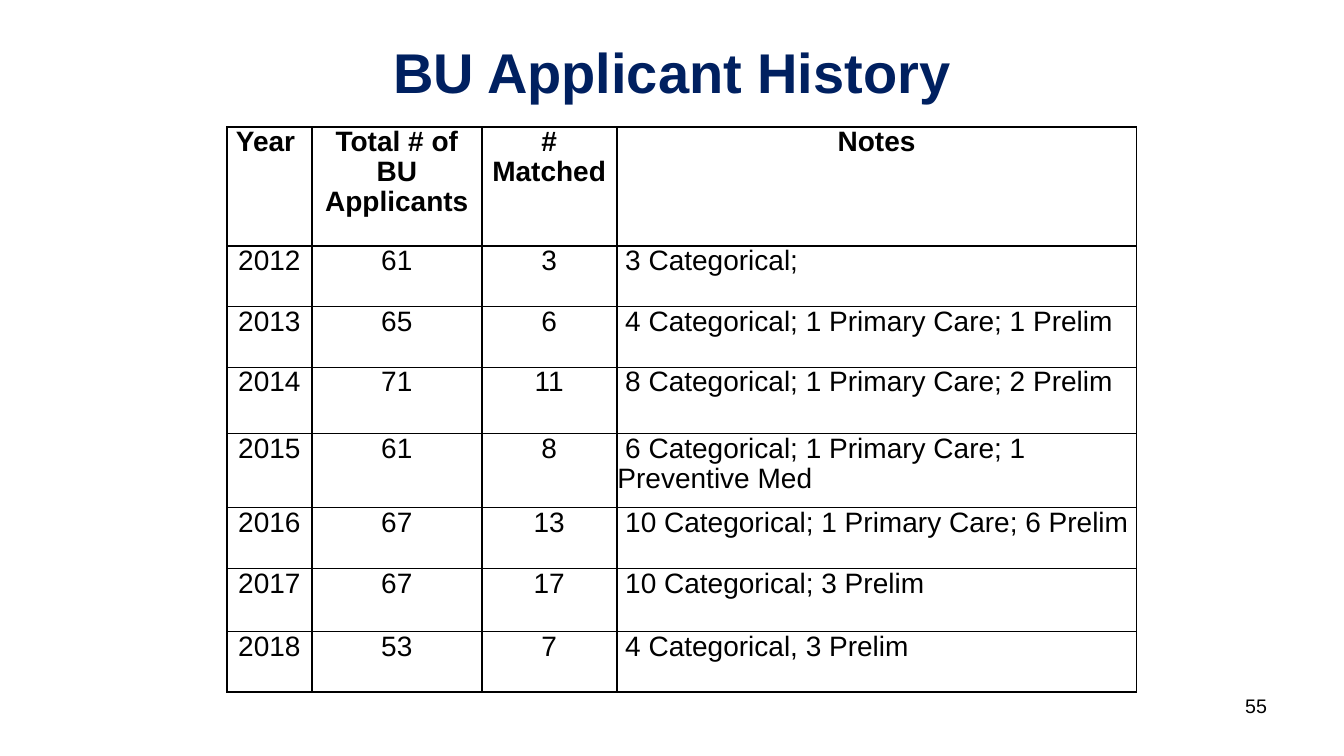
from dataclasses import dataclass

from lxml import etree
from pptx import Presentation
from pptx.dml.color import RGBColor
from pptx.enum.text import MSO_ANCHOR, PP_ALIGN
from pptx.oxml.ns import qn
from pptx.util import Cm, Pt

LEFT, CENTER, RIGHT = PP_ALIGN.LEFT, PP_ALIGN.CENTER, PP_ALIGN.RIGHT
MIDDLE = MSO_ANCHOR.MIDDLE
TITLE_ONLY = 5


@dataclass(frozen=True)
class Theme:
    font: str = "Arial"
    navy: str = "002060"
    black: str = "000000"
    title_size: int = 40
    table_size: int = 20
    number_size: int = 14
    thick: float = 1.5
    thin: float = 0.5
    line_spacing: float = 0.96


THEME = Theme()

COLUMN_WIDTHS = (2.14, 4.28, 3.4, 13.1)
ROW_HEIGHTS = (3, 1.52, 1.53, 1.67, 1.87, 1.53, 1.59, 1.53)
APPLICANT_HISTORY = (
    ("Year ", "Total # of BU Applicants", "# Matched", "Notes"),
    ("2012", "61", "3", " 3 Categorical;"),
    ("2013", "65", "6", " 4 Categorical; 1 Primary Care; 1 Prelim"),
    ("2014", "71", "11", " 8 Categorical; 1 Primary Care; 2 Prelim"),
    ("2015", "61", "8", " 6 Categorical; 1 Primary Care; 1 Preventive Med"),
    ("2016", "67", "13", " 10 Categorical; 1 Primary Care; 6 Prelim"),
    ("2017", "67", "17", " 10 Categorical; 3 Prelim"),
    ("2018", "53", "7", " 4 Categorical, 3 Prelim"),
)


def place(shape, box):
    shape.left, shape.top, shape.width, shape.height = (Cm(length) for length in box)


def write(frame, text, size, color, align, bold=False):
    frame.text = text
    para = frame.paragraphs[0]
    para.alignment = align
    font = para.runs[0].font
    font.name, font.size, font.bold = THEME.font, Pt(size), bold
    font.color.rgb = RGBColor.from_string(color)
    return para


def set_borders(cell, top, bottom):
    properties = cell._tc.get_or_add_tcPr()
    sides = (("L", THEME.thick), ("R", THEME.thick), ("T", top), ("B", bottom))
    for position, (side, width) in enumerate(sides):
        line = etree.Element(qn(f"a:ln{side}"), w=str(Pt(width)))
        fill = etree.SubElement(line, qn("a:solidFill"))
        etree.SubElement(fill, qn("a:srgbClr"), val=THEME.black)
        properties.insert(position, line)


def add_title(page, box):
    title = page.shapes.title
    place(title, box)
    frame = title.text_frame
    frame.vertical_anchor = MIDDLE
    write(frame, "BU Applicant History", THEME.title_size, THEME.navy, CENTER, True)


def fill_cell(cell, text, align, header):
    cell.margin_left = cell.margin_right = cell.margin_top = Cm(0.02)
    cell.margin_bottom = Cm(0)
    cell.fill.background()
    para = write(cell.text_frame, text, THEME.table_size, THEME.black, align, header)
    para.line_spacing = THEME.line_spacing


def add_history_table(page, box):
    rows, columns = len(ROW_HEIGHTS), len(COLUMN_WIDTHS)
    lengths = (Cm(length) for length in box)
    table = page.shapes.add_table(rows, columns, *lengths).table
    table.first_row = table.horz_banding = False
    for column, width in zip(table.columns, COLUMN_WIDTHS):
        column.width = Cm(width)
    for row, height in zip(table.rows, ROW_HEIGHTS):
        row.height = Cm(height)
    for r, record in enumerate(APPLICANT_HISTORY):
        header = r == 0
        top = THEME.thick if r <= 1 else THEME.thin
        bottom = THEME.thick if r in (0, rows - 1) else THEME.thin
        for c, text in enumerate(record):
            align = LEFT if c == columns - 1 and not header else CENTER
            cell = table.cell(r, c)
            fill_cell(cell, text, align, header)
            set_borders(cell, top, bottom)


def add_page_number(page, box):
    number = page.shapes.add_textbox(*(Cm(length) for length in box))
    number.text_frame.word_wrap = True
    write(number.text_frame, "55", THEME.number_size, THEME.black, RIGHT)


def main():
    deck = Presentation()
    deck.slide_width, deck.slide_height = Cm(33.87), Cm(19.05)
    page = deck.slides.add_slide(deck.slide_layouts[TITLE_ONLY])
    add_title(page, (5.5, 0.2, 22.86, 3.18))
    add_history_table(page, (5.72, 3.2, sum(COLUMN_WIDTHS), sum(ROW_HEIGHTS)))
    add_page_number(page, (24.28, 17.35, 7.9, 1.32))
    deck.save("out.pptx")


if __name__ == "__main__":
    main()
